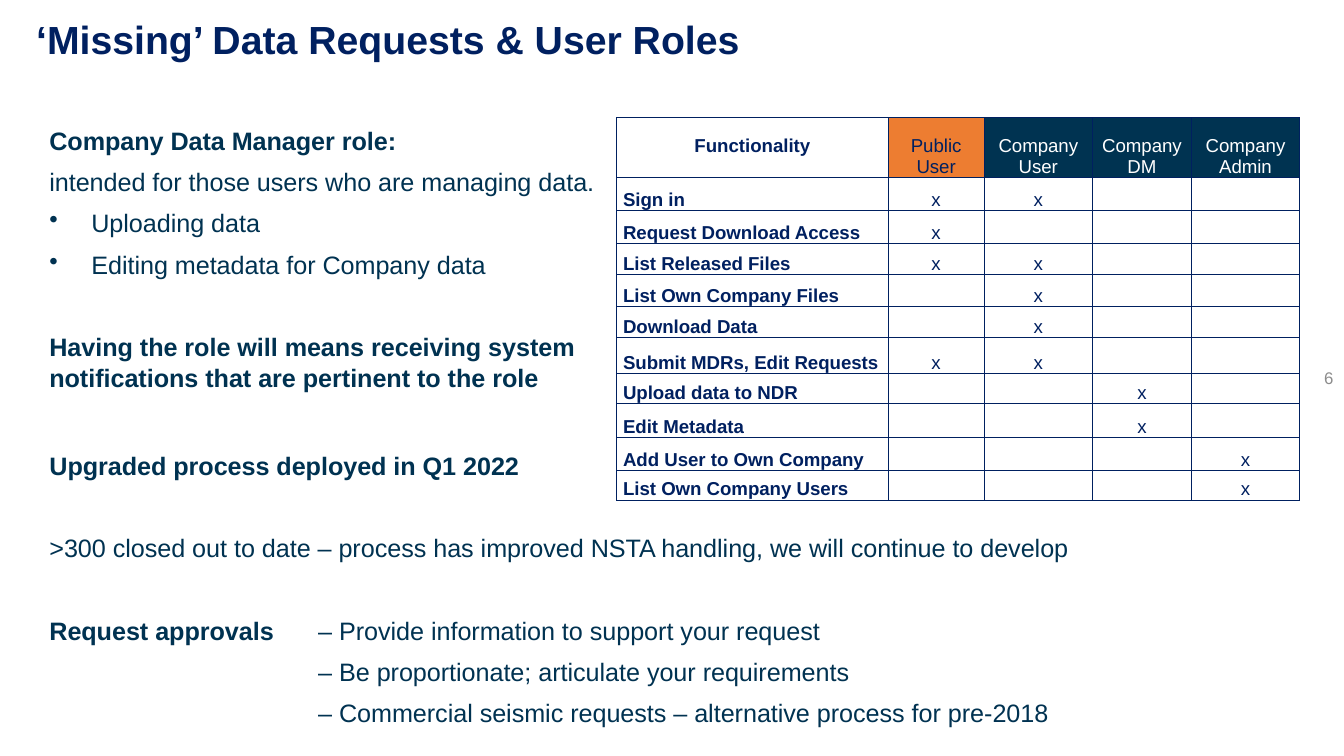
from pptx import Presentation
from pptx.util import Pt
from pptx.dml.color import RGBColor
from pptx.enum.text import PP_ALIGN as Align, MSO_ANCHOR as Anchor
from pptx.oxml.ns import qn
from lxml.etree import SubElement as Sub

NAVY, TEAL, DARK, WHITE = "002060", "003251", "003351", "FFFFFF"
ORANGE, GREY = "ED7D31", "8C8C8C"
BODY = dict(size=Pt(13.5), color=TEAL)
BOLD = dict(BODY, bold=True)
CELL = dict(size=Pt(10), color=NAVY)
GAP = 28

HEADS = [("Functionality", WHITE, NAVY), ("Public\vUser", ORANGE, NAVY),
         ("Company\vUser", DARK, WHITE), ("Company\vDM", DARK, WHITE),
         ("Company\vAdmin", DARK, WHITE)]
ROLES = [("Sign in", (1, 2)), ("Request Download Access", (1,)),
         ("List Released Files", (1, 2)), ("List Own Company Files", (2,)),
         ("Download Data", (2,)), ("Submit MDRs, Edit Requests", (1, 2)),
         ("Upload data to NDR", (3,)), ("Edit Metadata", (3,)),
         ("Add User to Own Company", (4,)), ("List Own Company Users", (4,))]
COLS = [145.5, 51.5, 58, 53, 58]
ROWS = [32, 17.7, 17.7, 16.6, 17.1, 16.6, 19.3, 16, 18.2, 17.7, 16]


def rgb(code):
    """Turn a hex string into a colour."""
    return RGBColor.from_string(code)


def style(run, form):
    """Set the font of a run from a dict of values."""
    font = run.font
    font.name = "Arial"
    for key, val in form.items():
        if key == "color":
            font.color.rgb = rgb(val)
        else:
            setattr(font, key, val)


def write(para, parts, **form):
    """Fill a paragraph with styled runs and set its format."""
    for key, val in form.items():
        setattr(para, key, val)
    for text, font in parts:
        if "\v" in text:
            para.text = text
            runs = para.runs
        else:
            runs = [para.add_run()]
            runs[0].text = text
        for run in runs:
            style(run, font)


def frame(slide, box, pads, anchor=Anchor.TOP):
    """Add a wrapping text box with the given insets."""
    text = slide.shapes.add_textbox(*map(Pt, box)).text_frame
    form = dict(zip(("margin_left", "margin_top", "margin_right", "margin_bottom"),
                    map(Pt, pads)), word_wrap=True, vertical_anchor=anchor)
    for key, val in form.items():
        setattr(text, key, val)
    return text


def bullet(para):
    """Give a paragraph a hanging bullet."""
    props = para._p.get_or_add_pPr()
    props.set("marL", str(Pt(22.5)))
    props.set("indent", str(-Pt(22.5)))
    Sub(props, qn("a:buChar"), char="•")


def tab(para, pos):
    """Set one left tab stop."""
    stops = Sub(para._p.get_or_add_pPr(), qn("a:tabLst"))
    Sub(stops, qn("a:tab"), pos=str(Pt(pos)), algn="l")


def stack(text, lines):
    """Write paragraphs of (space before, mark, runs) one below another."""
    for i, (gap, mark, parts) in enumerate(lines):
        para = text.add_paragraph() if i else text.paragraphs[0]
        if gap:
            para.space_before = Pt(gap)
        if mark == "dot":
            bullet(para)
        elif mark == "tab":
            tab(para, 144)
        write(para, parts)


def title(slide, box):
    """Place the slide title."""
    text = frame(slide, box, (0, 0, 7.2, 3.6))
    font = dict(size=Pt(21), color=NAVY, bold=True)
    write(text.paragraphs[0], [("‘Missing’ Data Requests & User Roles", font)],
          line_spacing=0.9)


def number(slide, box):
    """Place the page number."""
    text = frame(slide, box, (5, 3, 5, 3), Anchor.MIDDLE)
    write(text.paragraphs[0], [("6", dict(size=Pt(9), color=GREY))],
          alignment=Align.RIGHT)


def manager(slide, box):
    """Describe the data manager role."""
    stack(frame(slide, box, (7.2, 3.6, 7.2, 3.6)), [
        (0, "", [("Company Data Manager role:", BOLD)]),
        (6, "", [("intended for those users who are managing data.", BODY)]),
        (6, "dot", [("Uploading data", BODY)]),
        (6, "dot", [("Editing metadata for Company data", BODY)]),
        (GAP, "", [("Having the role will means receiving system "
                    "notifications that are pertinent to the role", BOLD)])])


def process(slide, box):
    """Describe the upgraded process and the approvals."""
    stack(frame(slide, box, (7.2, 25.7, 7.2, 3.6)), [
        (0, "", [("Upgraded process deployed in Q1 2022", BOLD)]),
        (GAP, "", [(">300 closed out to date – process has improved NSTA "
                    "handling, we will continue to develop", BODY)]),
        (GAP, "tab", [("Request approvals\t", BOLD),
                      ("– Provide information to support your request", BODY)]),
        (6, "tab", [("\t– Be proportionate; articulate your requirements", BODY)]),
        (6, "tab", [("\t– Commercial seismic requests – alternative process "
                     "for pre-2018", BODY)])])


def cell_box(cell, fill, left=0.7, low=0):
    """Set the borders, fill and insets of a cell."""
    props = cell._tc.get_or_add_tcPr()
    for side in "LRTB":
        line = Sub(props, qn("a:ln" + side), w=str(Pt(0.5)))
        Sub(Sub(line, qn("a:solidFill")), qn("a:srgbClr"), val=NAVY)
    cell.fill.solid()
    cell.fill.fore_color.rgb = rgb(fill)
    form = dict(margin_left=Pt(left), margin_right=Pt(0.7), margin_top=Pt(0.7),
                margin_bottom=Pt(low), vertical_anchor=Anchor.BOTTOM)
    for key, val in form.items():
        setattr(cell, key, val)


def matrix(slide, box):
    """Place the table of functions by user role."""
    grid = slide.shapes.add_table(len(ROWS), len(COLS), *map(Pt, box)).table
    for col, wide in zip(grid.columns, COLS):
        col.width = Pt(wide)
    for row, high in zip(grid.rows, ROWS):
        row.height = Pt(high)
    for c, (text, fill, ink) in enumerate(HEADS):
        cell = grid.cell(0, c)
        cell_box(cell, fill, low=0 if c else 11.5)
        write(cell.text_frame.paragraphs[0],
              [(text, dict(CELL, color=ink, bold=c == 0))], alignment=Align.CENTER)
    for r, (name, marks) in enumerate(ROLES, 1):
        for c in range(len(COLS)):
            cell = grid.cell(r, c)
            cell_box(cell, WHITE, left=0.7 if c else 3.5)
            para = cell.text_frame.paragraphs[0]
            if c == 0:
                write(para, [(name, dict(CELL, bold=True))])
            elif c in marks:
                write(para, [("x", CELL)], alignment=Align.CENTER)
            else:
                Sub(para._p, qn("a:endParaRPr"), sz="1000")


def main():
    """Build the slide and save it."""
    deck = Presentation()
    deck.slide_width, deck.slide_height = Pt(720), Pt(405)
    slide = deck.slides.add_slide(deck.slide_layouts[6])
    number(slide, (670.3, 189.4, 49, 26))
    title(slide, (19.4, 10.8, 490.3, 29.5))
    manager(slide, (19.4, 63.4, 314.6, 152))
    matrix(slide, (330.3, 63.1, sum(COLS), sum(ROWS)))
    process(slide, (19.4, 215.3, 687.6, 180.7))
    deck.save("out.pptx")


if __name__ == "__main__":
    main()
